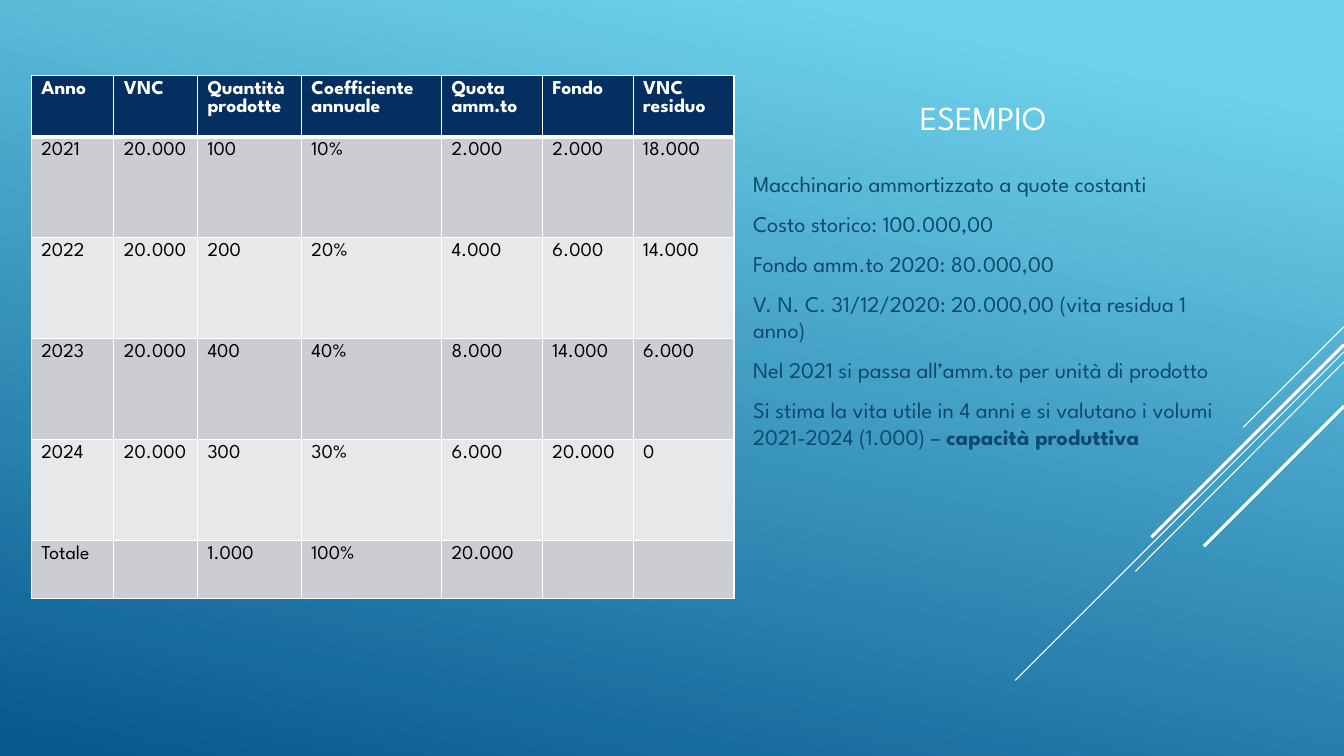
from lxml.etree import SubElement
from pptx import Presentation
from pptx.dml.color import RGBColor
from pptx.enum.shapes import MSO_CONNECTOR
from pptx.enum.text import MSO_ANCHOR, MSO_AUTO_SIZE, PP_ALIGN
from pptx.oxml.ns import qn
from pptx.util import Pt

PX = 9144
FONT = "League Spartan"
WHITE = RGBColor(0xFF, 0xFF, 0xFF)
BLACK = RGBColor(0, 0, 0)
NAVY = RGBColor(0x05, 0x2F, 0x61)
TEAL = RGBColor(0x0F, 0x49, 0x6F)
SKY = RGBColor(0x6E, 0xD2, 0xEB)
DEEP = RGBColor(0x06, 0x58, 0x8E)
BANDS = (RGBColor(0xE7, 0xE8, 0xEA), RGBColor(0xCC, 0xCD, 0xD2))

RAYS = [
    (1333, 324, 1233, 424, 0.75),
    (1333, 349, 1007, 675, 0.75),
    (1333, 359, 1126, 567, 0.75),
    (1333, 342, 1142, 533, 2.25),
    (1333, 403, 1194, 542, 2.25),
]
COLS = [82, 83, 103, 139, 100, 90, 100]
ROWS = [61, 100, 100, 100, 100, 58]
DEPRECIATION = [
    ["Anno", "VNC", "Quantità prodotte", "Coefficiente annuale",
     "Quota amm.to", "Fondo", "VNC residuo"],
    ["2021", "20.000", "100", "10%", "2.000", "2.000", "18.000"],
    ["2022", "20.000", "200", "20%", "4.000", "6.000", "14.000"],
    ["2023", "20.000", "400", "40%", "8.000", "14.000", "6.000"],
    ["2024", "20.000", "300", "30%", "6.000", "20.000", "0"],
    ["Totale", "", "1.000", "100%", "20.000", "", ""],
]
NOTES = [
    ["Macchinario ammortizzato a quote costanti"],
    ["Costo storico: 100.000,00"],
    ["Fondo amm.to 2020: 80.000,00"],
    ["V. N. C. 31/12/2020: 20.000,00 (vita residua 1 anno)"],
    ["Nel 2021 si passa all’amm.to per unità di prodotto"],
    ["Si stima la vita utile in 4 anni e si valutano i volumi 2021-2024 (1.000) – ",
     "capacità produttiva"],
]


def add_text(p, text, size=16, color=TEAL, bold=False):
    """Add a formatted run to a paragraph."""
    r = p.add_run()
    r.text = text
    r.font.name = FONT
    r.font.size = Pt(size)
    r.font.bold = bold
    r.font.color.rgb = color


def paint_background(s):
    """Fill the slide with the slanted blue gradient."""
    fill = s.background.fill
    fill.gradient()
    fill.gradient_angle = 258
    for stop, color, position in zip(fill.gradient_stops, (SKY, DEEP), (0.1, 1)):
        stop.color.rgb = color
        stop.position = position


def add_ray(s, x1, y1, x2, y2, width):
    """Draw one white diagonal line."""
    line = s.shapes.add_connector(
        MSO_CONNECTOR.STRAIGHT, x1 * PX, y1 * PX, x2 * PX, y2 * PX)
    line.line.color.rgb = WHITE
    line.line.width = Pt(width)
    SubElement(line.element.spPr, qn("a:effectLst"))


def place(s, sp, x, y, w, h, anchor):
    """Bring a placeholder to the front, position it and return its frame."""
    s.shapes.element.append(sp.element)
    sp.left, sp.top, sp.width, sp.height = x * PX, y * PX, w * PX, h * PX
    tf = sp.text_frame
    tf.word_wrap = True
    tf.auto_size = MSO_AUTO_SIZE.NONE
    tf.vertical_anchor = anchor
    return tf


def add_title(s, text):
    """Write the slide title."""
    tf = place(s, s.shapes.title, 775, 75, 400, 66, MSO_ANCHOR.BOTTOM)
    p = tf.paragraphs[0]
    p.alignment = PP_ALIGN.CENTER
    add_text(p, text, size=24, color=WHITE)


def add_notes(s, items):
    """Write the unbulleted list, with the second run of an item in bold."""
    tf = place(s, s.placeholders[1], 737, 164, 502, 479, MSO_ANCHOR.TOP)
    for i, parts in enumerate(items):
        p = tf.add_paragraph() if i else tf.paragraphs[0]
        p.space_before, p.space_after = Pt(3.2), Pt(6)
        pPr = p._p.get_or_add_pPr()
        pPr.set("marL", "0")
        pPr.set("indent", "0")
        SubElement(pPr, qn("a:buNone"))
        for j, text in enumerate(parts):
            add_text(p, text, bold=j > 0)


def set_borders(cell, **widths):
    """Give a cell white borders, in points by side."""
    tcPr = cell._tc.get_or_add_tcPr()
    for side in "LRTB":
        ln = SubElement(tcPr, qn(f"a:ln{side}"), w=str(Pt(widths.get(side, 1))))
        fill = SubElement(ln, qn("a:solidFill"))
        SubElement(fill, qn("a:srgbClr"), val=str(WHITE))


def add_schedule(s, x, y, rows):
    """Build the depreciation table with its header and banded rows."""
    table = s.shapes.add_table(
        len(ROWS), len(COLS), x * PX, y * PX, sum(COLS) * PX, sum(ROWS) * PX).table
    for column, width in zip(table.columns, COLS):
        column.width = width * PX
    for i, (row, height, texts) in enumerate(zip(table.rows, ROWS, rows)):
        row.height = height * PX
        header = i == 0
        for cell, text in zip(row.cells, texts):
            set_borders(cell, B=3 if header else 1, T=3 if i == 1 else 1)
            cell.fill.solid()
            cell.fill.fore_color.rgb = NAVY if header else BANDS[i % 2]
            if text:
                add_text(cell.text_frame.paragraphs[0], text, size=14,
                         color=WHITE if header else BLACK, bold=header)


def main():
    """Build and save the slide."""
    prs = Presentation()
    prs.slide_width, prs.slide_height = 1333 * PX, 750 * PX
    s = prs.slides.add_slide(prs.slide_layouts[1])
    paint_background(s)
    for ray in RAYS:
        add_ray(s, *ray)
    add_title(s, "ESEMPIO")
    add_schedule(s, 31, 75, DEPRECIATION)
    add_notes(s, NOTES)
    prs.save("out.pptx")


if __name__ == "__main__":
    main()
